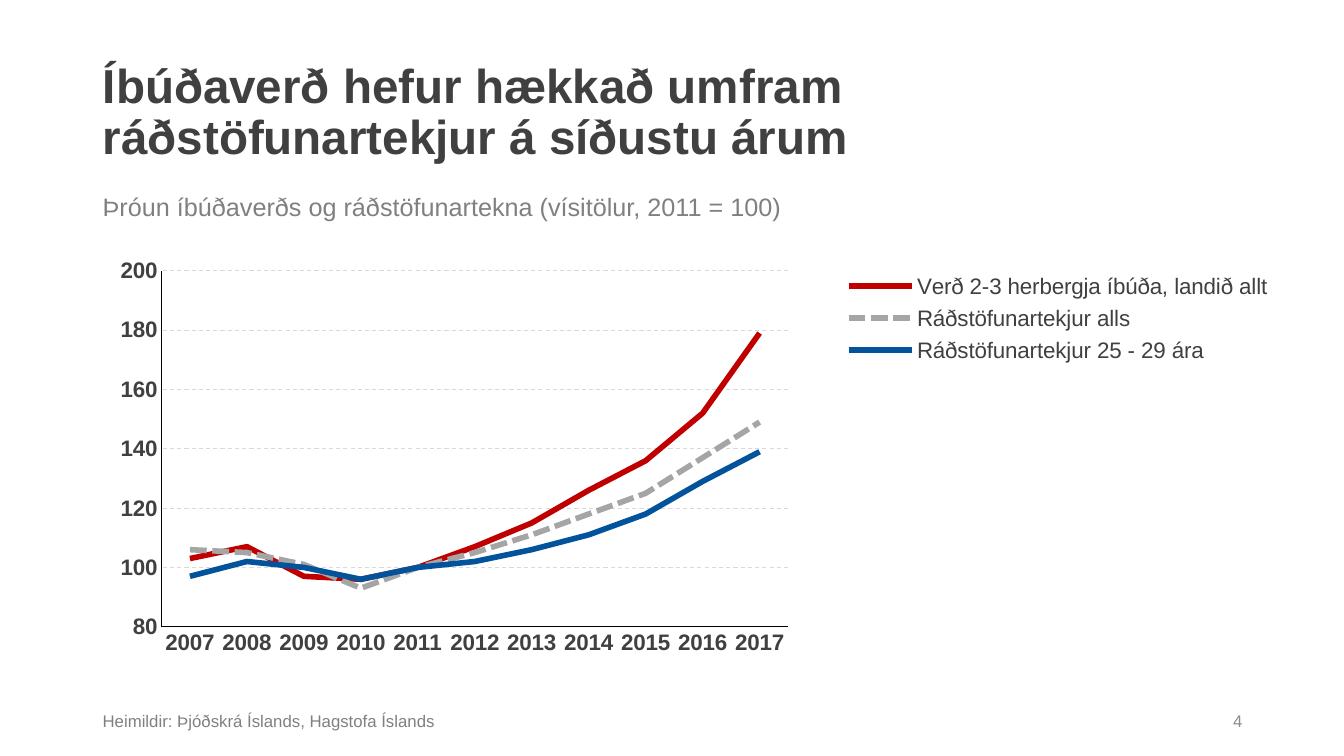
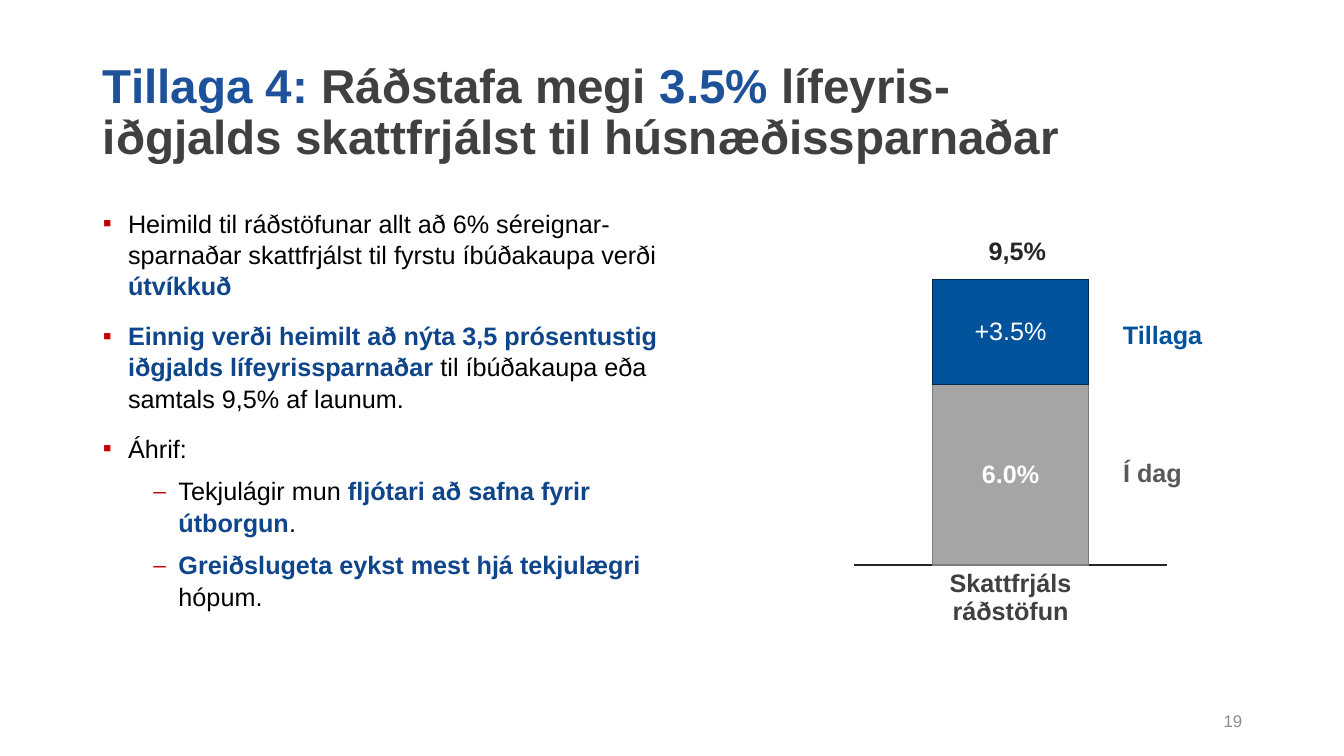
import pptx
import pptx.chart.data
import pptx.dml.color
import pptx.enum.chart
import pptx.enum.dml
import pptx.enum.text
import pptx.oxml
import pptx.oxml.ns
import pptx.util
from lxml import etree

Inches, Pt = pptx.util.Inches, pptx.util.Pt
RGB = pptx.dml.color.RGBColor.from_string
ALIGN = pptx.enum.text.PP_ALIGN
ANCHOR = pptx.enum.text.MSO_ANCHOR
CHART = pptx.enum.chart.XL_CHART_TYPE
DASH = pptx.enum.dml.MSO_LINE
qn = pptx.oxml.ns.qn

BLACK, WHITE = RGB("000000"), RGB("FFFFFF")
DARK, INK, SLATE = RGB("404040"), RGB("262626"), RGB("595959")
MUTED, PAGE_GRAY, GRID_GRAY = RGB("808080"), RGB("8C8C8C"), RGB("D9D9D9")
RED, BLUE, GRAY = RGB("C00000"), RGB("02529C"), RGB("A5A5A5")
BLUE_EDGE, GRAY_EDGE = RGB("01294E"), RGB("7C7C7C")
TITLE_BLUE, STRONG_BLUE = RGB("1D529B"), RGB("0E458B")

FONT = "Arial"
LEFT = 0.92
TITLE_BOX = (LEFT, 0.4, 11.5, 1.45)
PAGE_BOX = (9.42, 6.95, 3, 0.4)

# Text in a title or list is a sequence of (text, is_highlighted) runs.
PRICE_TITLE = [("Íbúðaverð hefur hækkað umfram ráðstöfunartekjur á síðustu árum", False)]
PRICE_SUBTITLE = "Þróun íbúðaverðs og ráðstöfunartekna (vísitölur, 2011 = 100)"
PRICE_SOURCES = "Heimildir: Þjóðskrá Íslands, Hagstofa Íslands"
YEARS = [str(year) for year in range(2007, 2018)]
PRICE_SERIES = [
    ("Verð 2-3 herbergja íbúða, landið allt",
     (103, 107, 97, 96, 100, 107, 115, 126, 136, 152, 179), RED, DASH.SOLID),
    ("Ráðstöfunartekjur alls",
     (106, 105, 101, 93, 100, 105, 111, 118, 125, 137, 149), GRAY, DASH.SQUARE_DOT),
    ("Ráðstöfunartekjur 25 - 29 ára",
     (97, 102, 100, 96, 100, 102, 106, 111, 118, 129, 139), BLUE, DASH.SOLID),
]

PROPOSAL_TITLE = [
    ("Tillaga 4:", True), (" Ráðstafa megi ", False), ("3.5%", True),
    (" lífeyris-\niðgjalds skattfrjálst til húsnæðissparnaðar", False),
]
PROPOSAL_POINTS = [
    (0, [("Heimild til ráðstöfunar allt að 6% séreignar-sparnaðar skattfrjálst "
          "til fyrstu íbúðakaupa verði ", False), ("útvíkkuð", True)]),
    (0, [("Einnig verði heimilt að nýta 3,5 prósentustig iðgjalds lífeyrissparnaðar ", True),
         ("til íbúðakaupa eða samtals 9,5% af launum.", False)]),
    (0, [("Áhrif:", False)]),
    (1, [("Tekjulágir mun ", False), ("fljótari að safna fyrir útborgun", True), (".", False)]),
    (1, [("Greiðslugeta eykst mest hjá tekjulægri ", True), ("hópum.", False)]),
]
# Per list level: bullet, indent in inches, space before in points
LEVELS = [("▪", 0.25, 10), ("⎯", 0.75, 5)]
SAVING_CATEGORY = "Skattfrjáls\nráðstöfun"
SAVING_SERIES = [
    ("Series 1", 0.06, GRAY, GRAY_EDGE),
    ("Series 2", 0.035, BLUE, BLUE_EDGE),
]
PROPOSED_LABEL = "+3.5%"
BAR_NOTES = [
    ("9,5%", (9.6, 2.29, 0.98, 0.46), INK),
    ("Tillaga", (10.87, 3.12, 1.32, 0.46), BLUE),
    ("Í dag", (10.77, 4.49, 1.32, 0.46), SLATE),
]


def style(font, size, color, bold=False):
    for name, value in {"name": FONT, "size": Pt(size), "bold": bold}.items():
        setattr(font, name, value)
    font.color.rgb = color


def set_line(line, color, width=0.75, dash=DASH.SOLID):
    line.color.rgb = color
    line.width = Pt(width)
    line.dash_style = dash


def place(shape, box):
    for side, value in zip(("left", "top", "width", "height"), box):
        setattr(shape, side, Inches(value))


def add_runs(p, runs, size, plain, strong, all_bold=False):
    for text, highlighted in runs:
        for i, part in enumerate(text.split("\n")):
            if i:
                p.add_line_break()
            r = p.add_run()
            r.text = part
            style(r.font, size, strong if highlighted else plain, all_bold or highlighted)


def add_label(s, text, box, size, color, bold=False, align=ALIGN.LEFT, anchor=ANCHOR.TOP):
    tf = s.shapes.add_textbox(*map(Inches, box)).text_frame
    tf.word_wrap = True
    tf.vertical_anchor = anchor
    p = tf.paragraphs[0]
    p.alignment = align
    r = p.add_run()
    r.text = text
    style(r.font, size, color, bold)


def add_slide(prs, layout, title_runs, number):
    s = prs.slides.add_slide(prs.slide_layouts.get_by_name(layout))
    place(s.shapes.title, TITLE_BOX)
    tf = s.shapes.title.text_frame
    tf.auto_size = pptx.enum.text.MSO_AUTO_SIZE.NONE
    tf.vertical_anchor = ANCHOR.MIDDLE
    p = tf.paragraphs[0]
    p.alignment = ALIGN.LEFT
    p.line_spacing = 0.9
    add_runs(p, title_runs, 34, DARK, TITLE_BLUE, all_bold=True)
    add_label(s, str(number), PAGE_BOX, 12, PAGE_GRAY,
              align=ALIGN.RIGHT, anchor=ANCHOR.MIDDLE)
    return s


def set_layout(parent, index, box, inner=False):
    """Fix a chart part at fractions (x, y, w, h) of the chart area."""
    for old in parent.findall(qn("c:layout")):
        parent.remove(old)
    layout = etree.Element(qn("c:layout"))
    manual = etree.SubElement(layout, qn("c:manualLayout"))
    values = [("layoutTarget", "inner")] if inner else []
    values += [("xMode", "edge"), ("yMode", "edge"), *zip("xywh", box)]
    for tag, value in values:
        etree.SubElement(manual, qn("c:" + tag)).set("val", str(value))
    parent.insert(index, layout)


def add_chart(s, kind, box, categories, series, plot_box, size, axis_color):
    data = pptx.chart.data.CategoryChartData()
    data.categories = categories
    for name, values in series:
        data.add_series(name, values)
    chart = s.shapes.add_chart(kind, *map(Inches, box), data).chart
    chart.has_title = chart.has_legend = False
    style(chart.font, size, DARK)
    for axis in (chart.category_axis, chart.value_axis):
        axis.major_tick_mark = axis.minor_tick_mark = pptx.enum.chart.XL_TICK_MARK.NONE
        style(axis.tick_labels.font, size, DARK, bold=True)
        set_line(axis.format.line, axis_color)
    chart.value_axis.has_major_gridlines = False
    plot_area = chart.plots[0]._element.getparent()
    set_layout(plot_area, 0, plot_box, inner=True)
    return chart


def build_price_slide(prs):
    s = add_slide(prs, "Title Only", PRICE_TITLE, 4)
    chart = add_chart(s, CHART.LINE, (LEFT, 1.94, 11.75, 5.41), YEARS,
                      [row[:2] for row in PRICE_SERIES],
                      (0.058, 0.138, 0.529, 0.653), 16, BLACK)
    axis = chart.value_axis
    axis.minimum_scale, axis.maximum_scale, axis.major_unit = 80, 200, 20
    axis.tick_labels.number_format = "0"
    axis.tick_labels.number_format_is_linked = False
    axis.has_major_gridlines = True
    set_line(axis.major_gridlines.format.line, GRID_GRAY, dash=DASH.DASH)
    for ser, (_, _, color, dash) in zip(chart.plots[0].series, PRICE_SERIES):
        ser.smooth = False
        set_line(ser.format.line, color, 4, dash)
    chart.has_legend = True
    chart.legend.position = pptx.enum.chart.XL_LEGEND_POSITION.CORNER
    chart.legend.include_in_layout = False
    style(chart.legend.font, 16, DARK)
    set_layout(chart.legend._element, 1, (0.63, 0.13, 0.37, 0.19))
    add_label(s, PRICE_SUBTITLE, (LEFT, 1.85, 8.19, 0.4), 18, MUTED)
    add_label(s, PRICE_SOURCES, (LEFT, 7, 4.37, 0.21), 12, MUTED)


def set_bullet(p, char, indent):
    pPr = p._p.get_or_add_pPr()
    pPr.set("marL", str(Inches(indent)))
    pPr.set("indent", str(-Inches(0.25)))
    color = etree.SubElement(pPr, qn("a:buClr"))
    etree.SubElement(color, qn("a:srgbClr")).set("val", str(RED))
    etree.SubElement(pPr, qn("a:buFont")).set("typeface", FONT)
    etree.SubElement(pPr, qn("a:buChar")).set("char", char)


def build_proposal_slide(prs):
    s = add_slide(prs, "Title and Content", PROPOSAL_TITLE, 19)
    body = s.placeholders[1]
    place(body, (LEFT, 2, 6.22, 4.76))
    tf = body.text_frame
    tf.auto_size = pptx.enum.text.MSO_AUTO_SIZE.NONE
    for i, (level, runs) in enumerate(PROPOSAL_POINTS):
        p = tf.add_paragraph() if i else tf.paragraphs[0]
        char, indent, before = LEVELS[level]
        p.level = level
        p.line_spacing = 1.04
        p.space_before, p.space_after = Pt(before), Pt(3)
        set_bullet(p, char, indent)
        add_runs(p, runs, 18, BLACK, STRONG_BLUE)

    chart = add_chart(s, CHART.COLUMN_STACKED, (8.45, 1.85, 3.13, 4.91), [SAVING_CATEGORY],
                      [(name, [value]) for name, value, _, _ in SAVING_SERIES],
                      (0.007, 0.157, 0.993, 0.608), 18, INK)
    axis = chart.value_axis
    axis.minimum_scale, axis.maximum_scale = 0, 0.1
    axis.visible = False
    plot = chart.plots[0]
    plot.gap_width = plot.overlap = 100
    plot.vary_by_categories = False
    for ser, (_, _, fill, edge) in zip(plot.series, SAVING_SERIES):
        ser.format.fill.solid()
        ser.format.fill.fore_color.rgb = fill
        set_line(ser.format.line, edge)
    today, proposed = plot.series
    labels = today.data_labels
    labels.show_value = True
    labels.number_format, labels.number_format_is_linked = "0.0%", False
    style(labels.font, 18, WHITE, bold=True)
    r = proposed.points[0].data_label.text_frame.paragraphs[0].add_run()
    r.text = PROPOSED_LABEL
    style(r.font, 18, WHITE)
    for text, box, color in BAR_NOTES:
        add_label(s, text, box, 18, color, bold=True, align=ALIGN.CENTER)


def main():
    prs = pptx.Presentation()
    prs.slide_width, prs.slide_height = Inches(13.33), Inches(7.5)
    build_price_slide(prs)
    build_proposal_slide(prs)
    prs.save("out.pptx")


if __name__ == "__main__":
    main()
